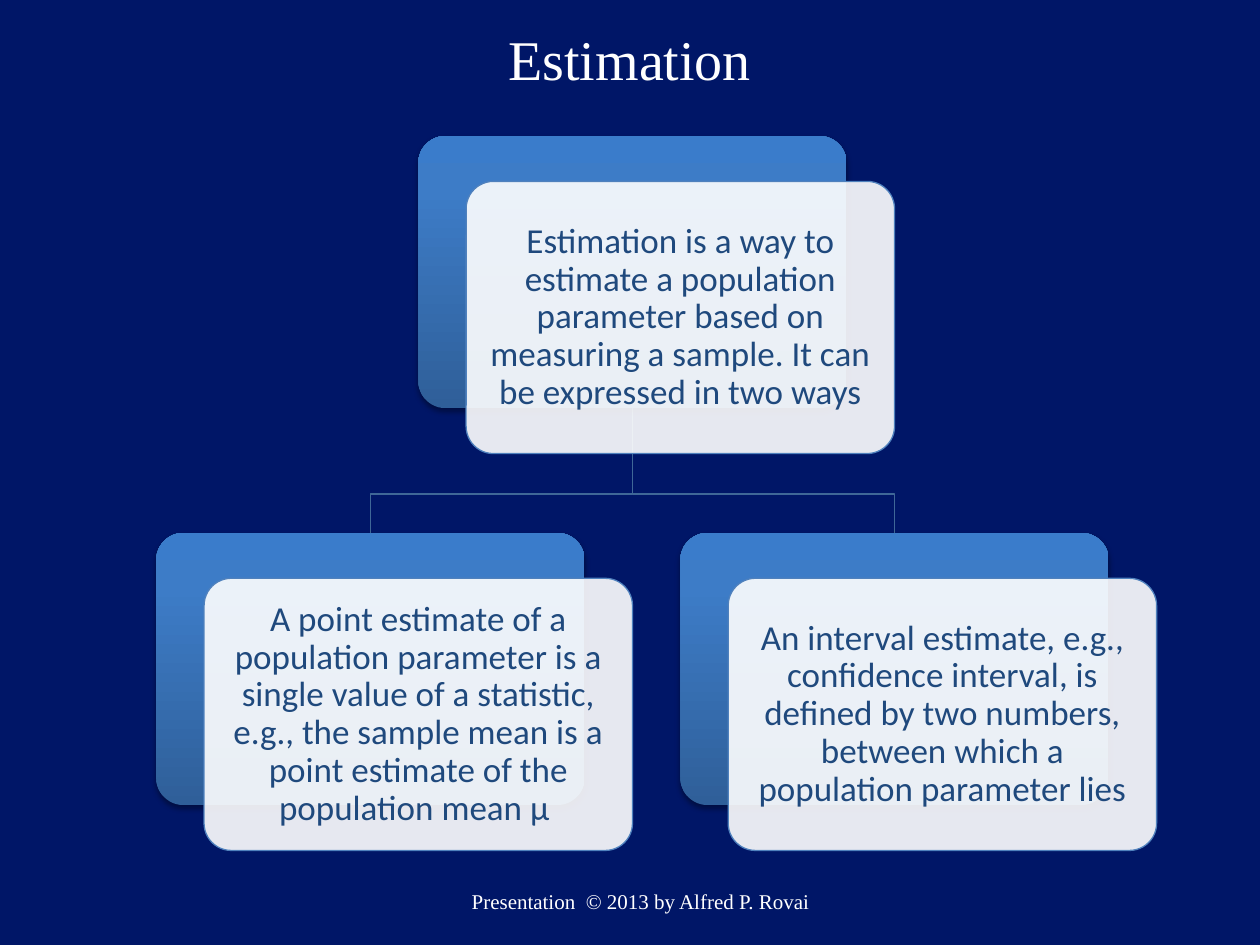
from lxml import etree
from pptx import Presentation
from pptx.dml.color import RGBColor
from pptx.enum import shapes, text
from pptx.oxml import parse_xml
from pptx.oxml.ns import nsdecls, qn
from pptx.util import Inches, Pt

TITLE = "Estimation"
FOOTER = "Presentation  © 2013 by Alfred P. Rovai"
ROOT = ("Estimation is a way to estimate a population parameter based on "
        "measuring a sample. It can be expressed in two ways")
CHILDREN = [
    "A point estimate of a population parameter is a single value of a "
    "statistic, e.g., the sample mean is a point estimate of the population mean μ ",
    "An interval estimate, e.g., confidence interval, is defined by two "
    "numbers, between which a population parameter lies",
]

NAVY = RGBColor(0x00, 0x16, 0x67)
WHITE = RGBColor(0xFF, 0xFF, 0xFF)
INK = RGBColor(0x1F, 0x49, 0x7D)
EDGE = RGBColor(0x4F, 0x81, 0xBD)
LINK = RGBColor(0x3F, 0x67, 0x97)
STOPS = [(0, RGBColor(0x2F, 0x5F, 0x99)),
         (80, RGBColor(0x3D, 0x7C, 0xC7)),
         (100, RGBColor(0x3A, 0x7C, 0xCB))]

CARD_W, CARD_H = 3.4, 2.16
SHIFT_X, SHIFT_Y = 0.38, 0.36
CENTER, PITCH = 5.02, 4.16
ROOT_Y, CHILD_Y, BEND_Y = 1.08, 4.23, 3.92


def write(sp, content, size, font, color, inset=None, spacing=None):
    tf = sp.text_frame
    tf.word_wrap = True
    tf.vertical_anchor = text.MSO_ANCHOR.MIDDLE
    if inset is not None:
        tf.margin_left = tf.margin_right = Inches(inset)
        tf.margin_top = tf.margin_bottom = Inches(inset)
    p = tf.paragraphs[0]
    p.alignment = text.PP_ALIGN.CENTER
    p.line_spacing = spacing
    r = p.add_run()
    r.text = content
    r.font.size = Pt(size)
    r.font.name = font
    r.font.color.rgb = color


def add_label(s, content, box, size):
    sp = s.shapes.add_textbox(*map(Inches, box))
    write(sp, content, size, "Times New Roman", WHITE)


def add_rounded(s, x, y):
    sp = s.shapes.add_shape(shapes.MSO_SHAPE.ROUNDED_RECTANGLE,
                            *map(Inches, (x, y, CARD_W, CARD_H)))
    sp.adjustments[0] = 0.1
    sp.shadow.inherit = False
    return sp


def add_node(s, center, y, content):
    x = center - CARD_W / 2
    back = add_rounded(s, x, y)
    back.line.fill.background()
    stops = "".join(f'<a:gs pos="{pos * 1000}"><a:srgbClr val="{color}"/></a:gs>'
                    for pos, color in STOPS)
    grad = parse_xml(f'<a:gradFill {nsdecls("a")}><a:gsLst>{stops}</a:gsLst>'
                     '<a:lin ang="16200000" scaled="0"/></a:gradFill>')
    spPr = back._element.spPr
    spPr.find(qn("a:prstGeom")).addnext(grad)
    spPr.find(qn("a:effectLst")).append(parse_xml(
        f'<a:outerShdw {nsdecls("a")} blurRad="{Pt(3.1)}" dist="{Pt(1.8)}" '
        'dir="5400000" rotWithShape="0"><a:srgbClr val="000000">'
        '<a:alpha val="35000"/></a:srgbClr></a:outerShdw>'))

    card = add_rounded(s, x + SHIFT_X, y + SHIFT_Y)
    card.fill.solid()
    card.fill.fore_color.rgb = WHITE
    color = card._element.spPr.find(qn("a:solidFill")).find(qn("a:srgbClr"))
    etree.SubElement(color, qn("a:alpha")).set("val", "90000")
    card.line.color.rgb = EDGE
    card.line.width = Pt(0.75)
    write(card, content, 20, "Calibri", INK, inset=0.08, spacing=0.9)


def add_branch(s, center):
    route = [(CENTER, ROOT_Y + CARD_H), (CENTER, BEND_Y),
             (center, BEND_Y), (center, CHILD_Y)]
    points = [(Inches(x), Inches(y)) for x, y in route]
    builder = s.shapes.build_freeform(*points[0])
    builder.add_line_segments(points[1:], close=False)
    sp = builder.convert_to_shape()
    sp.fill.background()
    sp.line.color.rgb = LINK
    sp.line.width = Pt(0.75)
    sp.shadow.inherit = False


def main():
    prs = Presentation()
    prs.slide_width, prs.slide_height = Inches(10), Inches(7.5)
    s = prs.slides.add_slide(prs.slide_layouts[6])
    s.background.fill.solid()
    s.background.fill.fore_color.rgb = NAVY

    add_label(s, TITLE, (0.5, 0, 9, 0.92), 32)
    centers = [CENTER + (i - (len(CHILDREN) - 1) / 2) * PITCH
               for i in range(len(CHILDREN))]
    for center in reversed(centers):
        add_branch(s, center)
    add_node(s, CENTER, ROOT_Y, ROOT)
    for center, content in zip(centers, CHILDREN):
        add_node(s, center, CHILD_Y, content)
    add_label(s, FOOTER, (1.75, 6.95, 6.67, 0.4), 12)
    prs.save("out.pptx")


if __name__ == "__main__":
    main()
